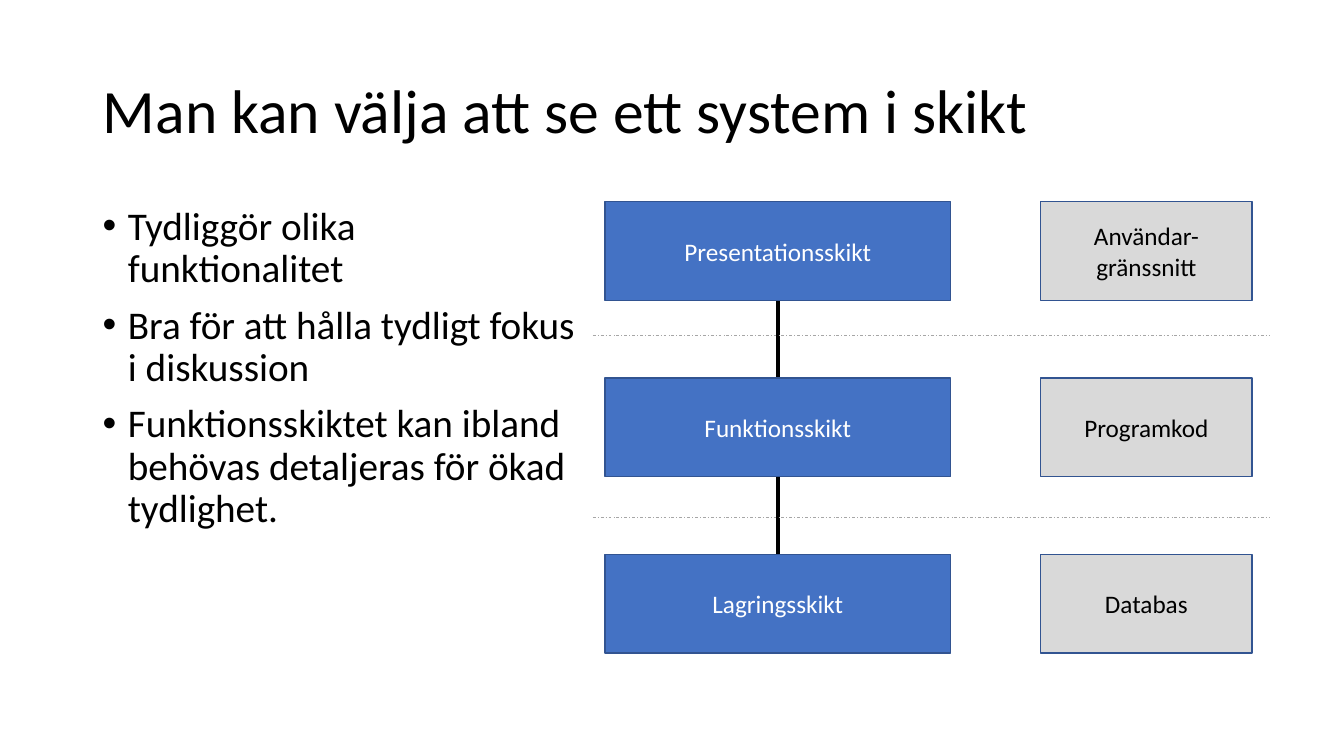
import pptx
import pptx.util
import pptx.dml.color
import pptx.enum.dml
import pptx.enum.shapes
import pptx.enum.text
import pptx.oxml
import pptx.oxml.ns
import lxml.etree

Inches = pptx.util.Inches
Pt = pptx.util.Pt
RGBColor = pptx.dml.color.RGBColor
PP_ALIGN = pptx.enum.text.PP_ALIGN
MSO_ANCHOR = pptx.enum.text.MSO_ANCHOR

BLACK = RGBColor(0x00, 0x00, 0x00)
WHITE = RGBColor(0xFF, 0xFF, 0xFF)
BLUE = RGBColor(0x44, 0x72, 0xC4)
DARK_BLUE = RGBColor(0x32, 0x54, 0x91)
LIGHT_GRAY = RGBColor(0xD9, 0xD9, 0xD9)
GRAY = RGBColor(0xA6, 0xA6, 0xA6)

LAYER_TOP, LAYER_STEP, LAYER_HEIGHT = 2, 1.75, 0.98
LAYER_LEFT, LAYER_WIDTH = 6, 3.43
EXAMPLE_LEFT, EXAMPLE_WIDTH = 10.32, 2.1


def write(frame, texts, size, color, frame_format, paragraph_format):
    for name, value in frame_format.items():
        setattr(frame, name, value)
    frame.text = "\n".join(texts)
    for paragraph in frame.paragraphs:
        for name, value in paragraph_format.items():
            setattr(paragraph, name, value)
        for run in paragraph.runs:
            for name, value in {"name": "Calibri", "size": Pt(size)}.items():
                setattr(run.font, name, value)
            run.font.color.rgb = color


def draw_line(start, end, color, width, dash=None):
    connector = slide.shapes.add_connector(
        pptx.enum.shapes.MSO_CONNECTOR.STRAIGHT, *map(Inches, start + end))
    connector.line.color.rgb = color
    connector.line.width = Pt(width)
    if dash:
        connector.line.dash_style = dash
    properties = connector._element.spPr
    lxml.etree.SubElement(properties, pptx.oxml.ns.qn("a:effectLst"))


presentation = pptx.Presentation()
presentation.slide_width = Inches(13.33)
presentation.slide_height = Inches(7.5)
slide = presentation.slides.add_slide(presentation.slide_layouts[5])

layer_center = LAYER_LEFT + LAYER_WIDTH / 2
draw_line((layer_center, LAYER_TOP + LAYER_HEIGHT),
          (layer_center, LAYER_TOP + 2 * LAYER_STEP), BLACK, 3)

heading = slide.shapes.title
heading_place = {"left": 0.92, "top": 0.4, "width": 11.5, "height": 1.45}
for name, value in heading_place.items():
    setattr(heading, name, Inches(value))
write(heading.text_frame, ["Man kan välja att se ett system i skikt"], 44, BLACK,
      {"vertical_anchor": MSO_ANCHOR.MIDDLE, "word_wrap": True,
       "auto_size": pptx.enum.text.MSO_AUTO_SIZE.NONE},
      {"alignment": PP_ALIGN.LEFT, "line_spacing": 0.9})

arguments = slide.shapes.add_textbox(
    Inches(0.92), Inches(2), Inches(4.88), Inches(4.76)).text_frame
write(arguments, [
    "Tydliggör olika funktionalitet",
    "Bra för att hålla tydligt fokus i diskussion",
    "Funktionsskiktet kan ibland behövas detaljeras för ökad tydlighet.",
], 28, BLACK, {"word_wrap": True}, {"line_spacing": 0.9, "space_before": Pt(10)})
for argument in arguments.paragraphs:
    properties = argument._p.get_or_add_pPr()
    properties.set("marL", str(Inches(0.25)))
    properties.set("indent", str(Inches(-0.25)))
    for tag, key, value in (("a:buFont", "typeface", "Arial"), ("a:buChar", "char", "•")):
        lxml.etree.SubElement(properties, pptx.oxml.ns.qn(tag)).set(key, value)

columns = [
    (LAYER_LEFT, LAYER_WIDTH, BLUE, WHITE,
     ["Presentationsskikt", "Funktionsskikt", "Lagringsskikt"]),
    (EXAMPLE_LEFT, EXAMPLE_WIDTH, LIGHT_GRAY, BLACK,
     ["Användar-gränssnitt", "Programkod", "Databas"]),
]
for left, width, fill, text_color, labels in columns:
    for row, label in enumerate(labels):
        box = slide.shapes.add_shape(
            pptx.enum.shapes.MSO_SHAPE.RECTANGLE, Inches(left),
            Inches(LAYER_TOP + row * LAYER_STEP), Inches(width), Inches(LAYER_HEIGHT))
        box.shadow.inherit = False
        box.fill.solid()
        box.fill.fore_color.rgb = fill
        box.line.color.rgb = DARK_BLUE
        box.line.width = Pt(1)
        write(box.text_frame, [label], 18, text_color,
              {"vertical_anchor": MSO_ANCHOR.MIDDLE, "word_wrap": True},
              {"alignment": PP_ALIGN.CENTER})

for boundary in (3.33, 5.13):
    draw_line((5.88, boundary), (12.6, boundary), GRAY, 0.5,
              pptx.enum.dml.MSO_LINE.DASH_DOT)

presentation.save("out.pptx")
